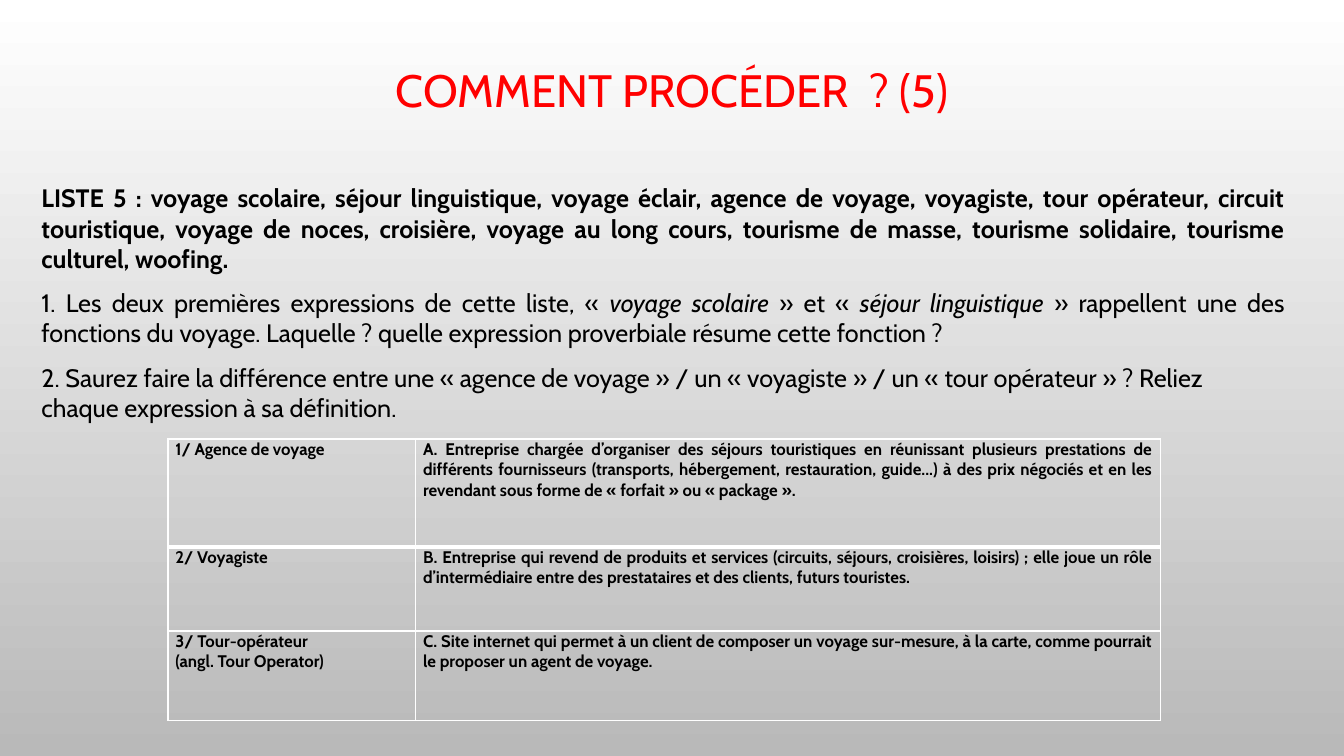
from lxml.etree import SubElement
from pptx import Presentation
from pptx.dml.color import RGBColor as RGB
from pptx.enum.text import MSO_ANCHOR as ANCHOR, MSO_AUTO_SIZE as AUTO, PP_ALIGN as ALIGN
from pptx.oxml.ns import qn
from pptx.util import Pt

PX = 9525  # EMU per px, slide of 1280 x 720 px
COLORS = {"title": "FF0000", "text": "000000", "border": "FFFFFF",
          "bg_top": "FFFFFF", "bg_bottom": "B9B9B9"}
FONT = "Cabin"

# Each paragraph: alignment, then runs of (text, format)
INSTRUCTIONS = [
    (ALIGN.JUSTIFY, [
        ("LISTE 5 : voyage scolaire, séjour linguistique, voyage éclair, agence de voyage, "
         "voyagiste, tour opérateur, circuit touristique, voyage de noces, croisière, voyage "
         "au long cours, tourisme de masse, tourisme solidaire, tourisme culturel, woofing.",
         {"bold": True})]),
    (ALIGN.JUSTIFY, [
        ("1. Les deux premières expressions de cette liste, « ", {}),
        ("voyage scolaire", {"italic": True}),
        (" » et « ", {}),
        ("séjour linguistique", {"italic": True}),
        (" » rappellent une des fonctions du voyage. Laquelle ? quelle expression "
         "proverbiale résume cette fonction ?", {})]),
    (ALIGN.LEFT, [
        ("2. Saurez faire la différence entre une « agence de voyage » / un « voyagiste » / "
         "un « tour opérateur » ? Reliez chaque expression à sa définition.", {})]),
]

# Each row: term, definition, height in px
DEFINITIONS = [
    (["1/ Agence de voyage"],
     ["A. Entreprise chargée d’organiser des séjours touristiques en réunissant plusieurs "
      "prestations de différents fournisseurs (transports, hébergement, restauration, "
      "guide...) à des prix négociés et en les revendant sous forme de « forfait » ou "
      "« package »."], 103),
    (["2/ Voyagiste"],
     ["B. Entreprise qui revend de produits et services (circuits, séjours, croisières, "
      "loisirs) ; elle joue un rôle d’intermédiaire entre des prestataires et des clients, "
      "futurs touristes."], 80),
    (["3/ Tour-opérateur", "(angl. Tour Operator)"],
     ["C. Site internet qui permet à un client de composer un voyage sur-mesure, à la carte, "
      "comme pourrait le proposer un agent de voyage."], 85),
]


def emu(box):
    return [length * PX for length in box]


def set_all(target, values):
    for name, value in values.items():
        setattr(target, name, value)


def add_run(paragraph, text, size, color="text", **style):
    run = paragraph.add_run()
    run.text = text
    set_all(run.font, {"name": FONT, "size": Pt(size), **style})
    run.font.color.rgb = RGB.from_string(COLORS[color])


def paragraphs(frame, count):
    return [frame.paragraphs[0]] + [frame.add_paragraph() for _ in range(count - 1)]


def paint_background(slide):
    fill = slide.background.fill
    fill.gradient()
    fill.gradient_angle = 270
    for stop, position, name in zip(fill.gradient_stops, (0, 1), ("bg_top", "bg_bottom")):
        stop.position = position
        stop.color.rgb = RGB.from_string(COLORS[name])


def place_title(slide, box):
    title = slide.shapes.title
    set_all(title, dict(zip(("left", "top", "width", "height"), emu(box))))
    set_all(title.text_frame, {"vertical_anchor": ANCHOR.MIDDLE, "auto_size": AUTO.NONE,
                               "word_wrap": True})
    heading = title.text_frame.paragraphs[0]
    set_all(heading, {"alignment": ALIGN.CENTER, "line_spacing": 0.9})
    add_run(heading, "COMMENT PROCÉDER  ? (5)", 32.4, "title")


def add_instructions(slide, box):
    frame = slide.shapes.add_textbox(*emu(box)).text_frame
    set_all(frame, {"word_wrap": True, "margin_top": 0, "margin_bottom": 0})
    for index, (paragraph, (alignment, runs)) in enumerate(
            zip(paragraphs(frame, len(INSTRUCTIONS)), INSTRUCTIONS)):
        set_all(paragraph, {"alignment": alignment, "space_before": Pt(10 if index else 0)})
        for text, style in runs:
            add_run(paragraph, text, 18, **style)


def add_borders(cell, widths):
    properties = cell._tc.get_or_add_tcPr()
    for side, width in widths.items():
        line = SubElement(properties, qn(f"a:ln{side}"), w=str(Pt(width)))
        SubElement(SubElement(line, qn("a:solidFill")), qn("a:srgbClr"), val=COLORS["border"])


def fill_cell(cell, lines, borders):
    add_borders(cell, borders)
    cell.fill.background()
    set_all(cell, {"margin_left": 7 * PX, "margin_right": 7 * PX,
                   "margin_top": 0, "margin_bottom": 0})
    for paragraph, text in zip(paragraphs(cell.text_frame, len(lines)), lines):
        paragraph.alignment = ALIGN.JUSTIFY
        add_run(paragraph, text, 12, bold=True)


def add_definitions(slide, box):
    table = slide.shapes.add_table(len(DEFINITIONS), 2, *emu(box)).table
    set_all(table, {"first_row": False, "horz_banding": False})
    term_width = box[2] // 4
    for column, width in zip(table.columns, (term_width, box[2] - term_width)):
        column.width = width * PX
    for index, (term, definition, height) in enumerate(DEFINITIONS):
        table.rows[index].height = height * PX
        # A thick rule separates the first row from the others
        borders = {"L": 1, "R": 1, "T": 3 if index == 1 else 1, "B": 3 if index == 0 else 1}
        for cell, lines in zip(table.rows[index].cells, (term, definition)):
            fill_cell(cell, lines, borders)


def main():
    deck = Presentation()
    set_all(deck, {"slide_width": 1280 * PX, "slide_height": 720 * PX})
    slide = deck.slides.add_slide(deck.slide_layouts[5])
    paint_background(slide)
    place_title(slide, (96, 61, 1088, 54))
    add_instructions(slide, (30, 174, 1203, 234))
    add_definitions(slide, (160, 418, 945, 268))
    deck.save("out.pptx")


if __name__ == "__main__":
    main()
